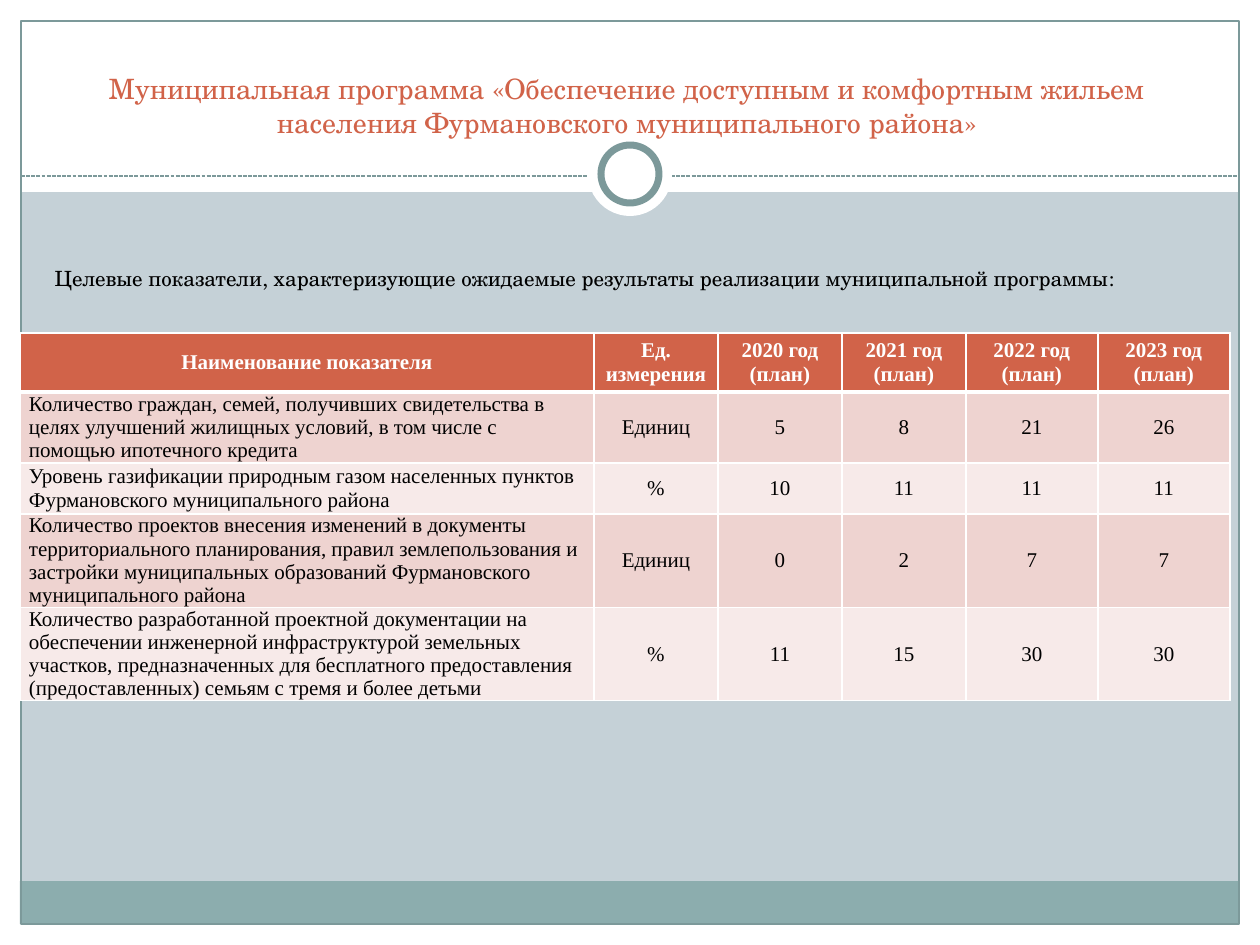
from lxml import etree
from pptx import Presentation
from pptx.dml.color import RGBColor
from pptx.enum.dml import MSO_LINE
from pptx.enum.shapes import MSO_CONNECTOR, MSO_SHAPE
from pptx.enum.text import MSO_ANCHOR, MSO_AUTO_SIZE, PP_ALIGN
from pptx.oxml.ns import qn
from pptx.util import Pt

RECTANGLE, ELLIPSE = MSO_SHAPE.RECTANGLE, MSO_SHAPE.OVAL
STRAIGHT, DASH = MSO_CONNECTOR.STRAIGHT, MSO_LINE.SQUARE_DOT
LEFT, CENTER = PP_ALIGN.LEFT, PP_ALIGN.CENTER
MIDDLE, BOTTOM = MSO_ANCHOR.MIDDLE, MSO_ANCHOR.BOTTOM
NO_AUTOFIT = MSO_AUTO_SIZE.NONE

WIDTH, HEIGHT = 1260, 945
EMU_PER_PX = 914400 / 126

WHITE, BLACK = "FFFFFF", "000000"
BACKGROUND, BAND, FRAME = "C5D1D7", "8CADAE", "7C999A"
ACCENT, ROW_DARK, ROW_LIGHT = "D16349", "EED3D0", "F7EAE9"

TITLE = ("Муниципальная программа «Обеспечение доступным и комфортным жильем "
         "населения Фурмановского муниципального района»")
INTRO = ("Целевые показатели, характеризующие ожидаемые результаты "
         "реализации муниципальной программы:")
YEARS = range(2020, 2024)
HEADER = ["Наименование показателя", "Ед. измерения"]
HEADER += [f"{year} год\n(план)" for year in YEARS]
INDICATORS = [
    ["Количество граждан, семей, получивших свидетельства в целях улучшений "
     "жилищных условий, в том числе с помощью ипотечного кредита",
     "Единиц", 5, 8, 21, 26],
    ["Уровень газификации природным газом населенных пунктов Фурмановского "
     "муниципального района",
     "%", 10, 11, 11, 11],
    ["Количество проектов внесения изменений в документы территориального "
     "планирования, правил землепользования и застройки муниципальных "
     "образований Фурмановского муниципального района",
     "Единиц", 0, 2, 7, 7],
    ["Количество разработанной проектной документации на обеспечении "
     "инженерной инфраструктурой земельных участков, предназначенных для "
     "бесплатного предоставления (предоставленных) семьям с тремя и более детьми",
     "%", 11, 15, 30, 30],
]
COLUMN_WIDTHS = [574, 124, 124, 124, 132, 132]
ROW_HEIGHTS = [59, 71, 51, 93, 93]


def px(length):
    return round(length * EMU_PER_PX)


def color(value):
    return RGBColor.from_string(value)


class SlideBuilder:
    heading_font = "TeX Gyre Schola"
    table_font = "Times New Roman"

    def __init__(self, slide):
        self.slide = slide
        fill = slide.background.fill
        fill.solid()
        fill.fore_color.rgb = color(BACKGROUND)

    def shape(self, kind, box, fill=None, line=None, line_width=0.75):
        shape = self.slide.shapes.add_shape(kind, *map(px, box))
        shape.shadow.inherit = False
        if fill:
            shape.fill.solid()
            shape.fill.fore_color.rgb = color(fill)
        else:
            shape.fill.background()
        if line:
            shape.line.color.rgb = color(line)
            shape.line.width = Pt(line_width)
        else:
            shape.line.fill.background()

    def dashed_line(self, left, right, y):
        line = self.slide.shapes.add_connector(
            STRAIGHT, px(left), px(y), px(right), px(y))
        line.line.color.rgb = color(FRAME)
        line.line.width = Pt(0.75)
        line.line.dash_style = DASH
        etree.SubElement(line._element.spPr, qn("a:effectLst"))

    def style(self, paragraph, font, size, text_color, align, bold=False):
        paragraph.alignment = align
        paragraph.font.name = font
        paragraph.font.size = Pt(size)
        paragraph.font.bold = bold
        paragraph.font.color.rgb = color(text_color)

    def placeholder(self, index, box, text, size, text_color, align):
        shape = self.slide.placeholders[index]
        shape.left, shape.top, shape.width, shape.height = map(px, box)
        # Bring the text in front of the frame
        self.slide.shapes._spTree.append(shape._element)
        frame = shape.text_frame
        frame.text = text
        frame.word_wrap = True
        frame.auto_size = NO_AUTOFIT
        frame.vertical_anchor = BOTTOM
        paragraph = frame.paragraphs[0]
        self.style(paragraph, self.heading_font, size, text_color, align)
        paragraph.space_before = Pt(0)
        properties = paragraph._p.get_or_add_pPr()
        properties.set("marL", "0")
        properties.set("indent", "0")
        bullet = etree.Element(qn("a:buNone"))
        properties.insert_element_before(bullet, "a:tabLst", "a:defRPr")
        return frame

    def borders(self, cell, top, bottom):
        properties = cell._tc.get_or_add_tcPr()
        sides = {"lnL": 1, "lnR": 1, "lnT": top, "lnB": bottom}
        for position, (side, width) in enumerate(sides.items()):
            line = etree.Element(qn(f"a:{side}"), w=str(Pt(width)))
            fill = etree.SubElement(line, qn("a:solidFill"))
            etree.SubElement(fill, qn("a:srgbClr"), val=WHITE)
            properties.insert(position, line)

    def cell(self, cell, text, fill, text_color, align, bold):
        cell.text = str(text)
        cell.vertical_anchor = MIDDLE
        cell.margin_left = cell.margin_right = px(9)
        cell.margin_top = cell.margin_bottom = 0
        cell.fill.solid()
        cell.fill.fore_color.rgb = color(fill)
        for paragraph in cell.text_frame.paragraphs:
            self.style(paragraph, self.table_font, 12, text_color, align, bold)

    def table(self, left, top, rows):
        box = (left, top, sum(COLUMN_WIDTHS), sum(ROW_HEIGHTS))
        table = self.slide.shapes.add_table(
            len(rows), len(COLUMN_WIDTHS), *map(px, box)).table
        for column, width in zip(table.columns, COLUMN_WIDTHS):
            column.width = px(width)
        for i, (row, height) in enumerate(zip(rows, ROW_HEIGHTS)):
            table.rows[i].height = px(height)
            header = i == 0
            fill = ACCENT if header else (ROW_LIGHT, ROW_DARK)[i % 2]
            for j, text in enumerate(row):
                cell = table.cell(i, j)
                align = CENTER if header or j else LEFT
                self.cell(cell, text, fill, WHITE if header else BLACK, align, header)
                self.borders(cell, 3 if i == 1 else 1, 3 if header else 1)


def main():
    presentation = Presentation()
    presentation.slide_width, presentation.slide_height = px(WIDTH), px(HEIGHT)
    builder = SlideBuilder(
        presentation.slides.add_slide(presentation.slide_layouts[1]))

    # White margins, title area, footer band and frame
    margin = 21
    for box in [(0, HEIGHT - margin, WIDTH, margin), (0, 0, WIDTH, 192),
                (0, 0, margin, HEIGHT), (WIDTH - margin, 0, margin, HEIGHT)]:
        builder.shape(RECTANGLE, box, WHITE)
    builder.shape(RECTANGLE, (20, 881, 1218, 43), BAND)
    builder.shape(RECTANGLE, (margin, margin, WIDTH - 2 * margin,
                              HEIGHT - 2 * margin), line=FRAME)

    # Divider with a ring
    builder.dashed_line(margin, WIDTH - margin, 176)
    builder.shape(ELLIPSE, (588, 132, 84, 84), WHITE)
    builder.shape(ELLIPSE, (601, 145, 58, 58), WHITE, FRAME, 4)

    # Title and introduction
    builder.placeholder(0, (39, 78, 1176, 67), TITLE, 16, ACCENT, CENTER)
    intro = builder.placeholder(1, (42, 200, 1172, 91), INTRO, 12, BLACK, LEFT)
    intro.margin_bottom = 0

    # Target indicators
    builder.table(20, 333, [HEADER] + INDICATORS)
    presentation.save("out.pptx")


if __name__ == "__main__":
    main()
